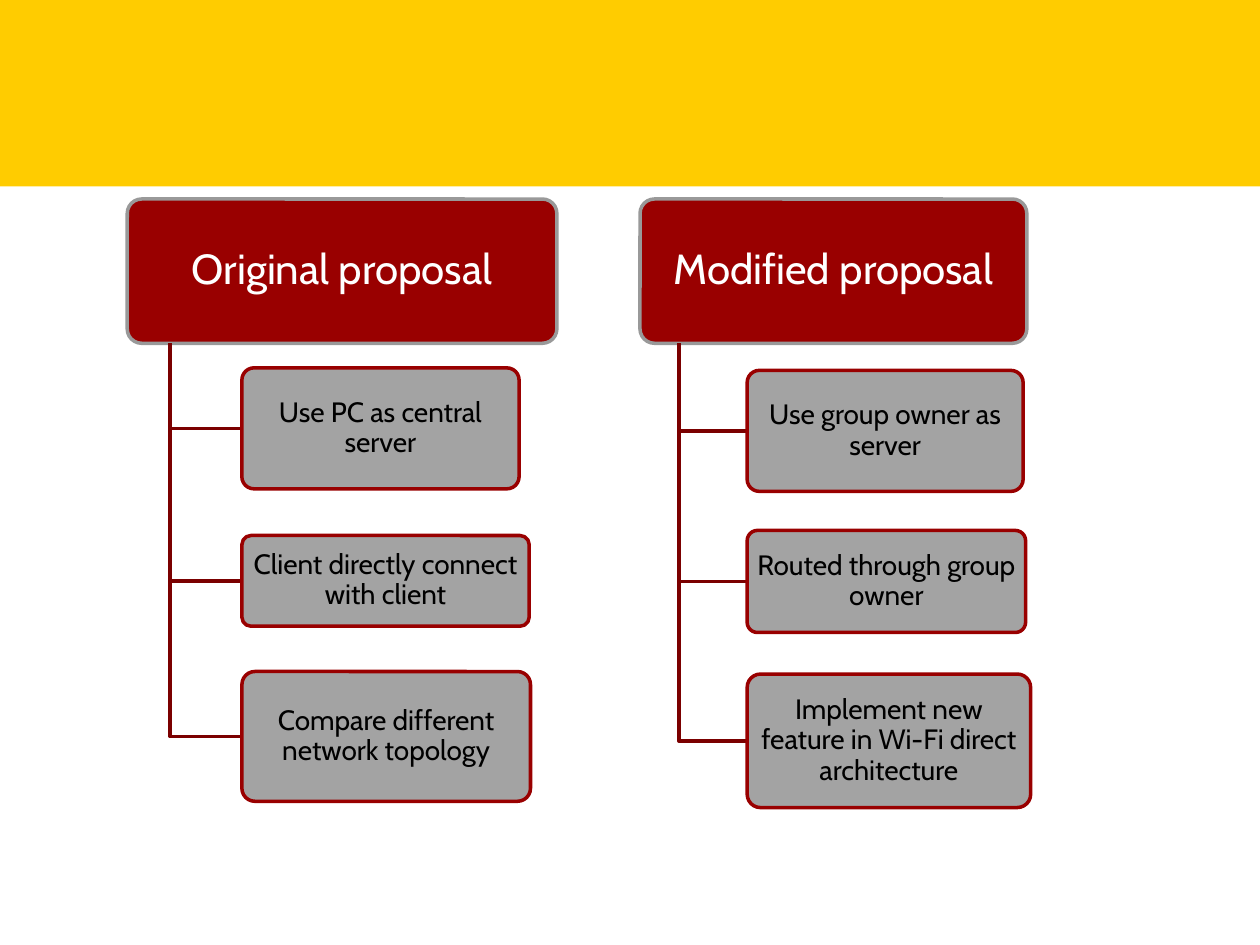
from dataclasses import dataclass
from lxml import etree
from pptx import Presentation, util as u
from pptx.dml.color import RGBColor
from pptx.enum import shapes, text
from pptx.oxml.ns import qn

GOLD = RGBColor(0xFF, 0xCC, 0x00)
RED = RGBColor(0x99, 0x00, 0x00)
MAROON = RGBColor(0x7B, 0x00, 0x00)
GREY = RGBColor(0x99, 0x99, 0x99)
WHITE = RGBColor(0xFF, 0xFF, 0xFF)
BLACK = RGBColor(0x00, 0x00, 0x00)

COLUMNS, ROWS = 100, 75
HEADING_TOP, HEADING_HEIGHT = 15.8, 11.45
TRUNK_SHARE = 0.1

BRANCHES = [
    ("Original proposal", 10.1, 34.1, 19.2, [
        ("Use PC as central server", 29.2, 22.0, 9.6),
        ("Client directly connect with client", 42.5, 22.8, 7.2),
        ("Compare different network topology", 53.3, 22.9, 10.3),
    ]),
    ("Modified proposal", 50.8, 30.7, 59.3, [
        ("Use group owner as server", 29.4, 21.9, 9.6),
        ("Routed through group owner", 42.1, 22.1, 8.1),
        ("Implement new feature in Wi-Fi direct architecture", 53.5, 22.5, 10.6),
    ]),
]


@dataclass
class Painter:
    deck: object
    page: object
    font: str = "Cabin"
    line_width: float = 2

    def x(self, columns):
        return u.Emu(round(self.deck.slide_width * columns / COLUMNS))

    def y(self, rows):
        return u.Emu(round(self.deck.slide_height * rows / ROWS))

    def outline(self, shape, color):
        shape.line.color.rgb = color
        shape.line.width = u.Pt(self.line_width)

    def panel(self, kind, left, top, width, height, fill):
        shape = self.page.shapes.add_shape(
            kind, self.x(left), self.y(top), self.x(width), self.y(height))
        shape.shadow.inherit = False
        shape.fill.solid()
        shape.fill.fore_color.rgb = fill
        shape.line.fill.background()
        return shape

    def band(self, height):
        self.panel(shapes.MSO_SHAPE.RECTANGLE, 0, 0, COLUMNS, height, GOLD)

    def card(self, words, left, top, width, height, fill, edge, ink, size, insets):
        box = self.panel(shapes.MSO_SHAPE.ROUNDED_RECTANGLE,
                         left, top, width, height, fill)
        box.adjustments[0] = 0.1
        self.outline(box, edge)
        frame = box.text_frame
        frame.text = words
        frame.word_wrap = True
        frame.vertical_anchor = text.MSO_ANCHOR.MIDDLE
        frame.margin_left = frame.margin_right = u.Inches(insets[0])
        frame.margin_top = frame.margin_bottom = u.Inches(insets[1])
        para = frame.paragraphs[0]
        para.alignment = text.PP_ALIGN.CENTER
        para.line_spacing = 0.9
        span = para.runs[0]
        span.font.name = self.font
        span.font.size = u.Pt(size)
        span.font.color.rgb = ink
        return box

    def heading(self, words, left, width):
        self.card(words, left, HEADING_TOP, width, HEADING_HEIGHT,
                  RED, GREY, WHITE, 24, (0.05, 0.03))

    def item(self, words, left, top, width, height):
        box = self.card(words, left, top, width, height,
                        GREY, RED, BLACK, 16, (0.03, 0.02))
        color = box.fill._xPr.find(qn("a:solidFill")).find(qn("a:srgbClr"))
        etree.SubElement(color, qn("a:alpha")).set("val", "90000")

    def elbow(self, left, top, right, bottom):
        builder = self.page.shapes.build_freeform(self.x(left), self.y(top))
        builder.add_line_segments(
            [(self.x(left), self.y(bottom)), (self.x(right), self.y(bottom))],
            close=False)
        link = builder.convert_to_shape()
        link.shadow.inherit = False
        link.fill.background()
        self.outline(link, MAROON)

    def branch(self, title, left, width, item_left, items):
        self.heading(title, left, width)
        trunk = left + width * TRUNK_SHARE
        for words, top, item_width, height in items:
            self.elbow(trunk, HEADING_TOP + HEADING_HEIGHT,
                       item_left, top + height / 2)
            self.item(words, item_left, top, item_width, height)


def main():
    deck = Presentation()
    deck.slide_width, deck.slide_height = u.Inches(10), u.Inches(7.5)
    page = deck.slides.add_slide(deck.slide_layouts[6])
    painter = Painter(deck, page)
    painter.band(14.8)
    for branch in BRANCHES:
        painter.branch(*branch)
    deck.save("out.pptx")


if __name__ == "__main__":
    main()
